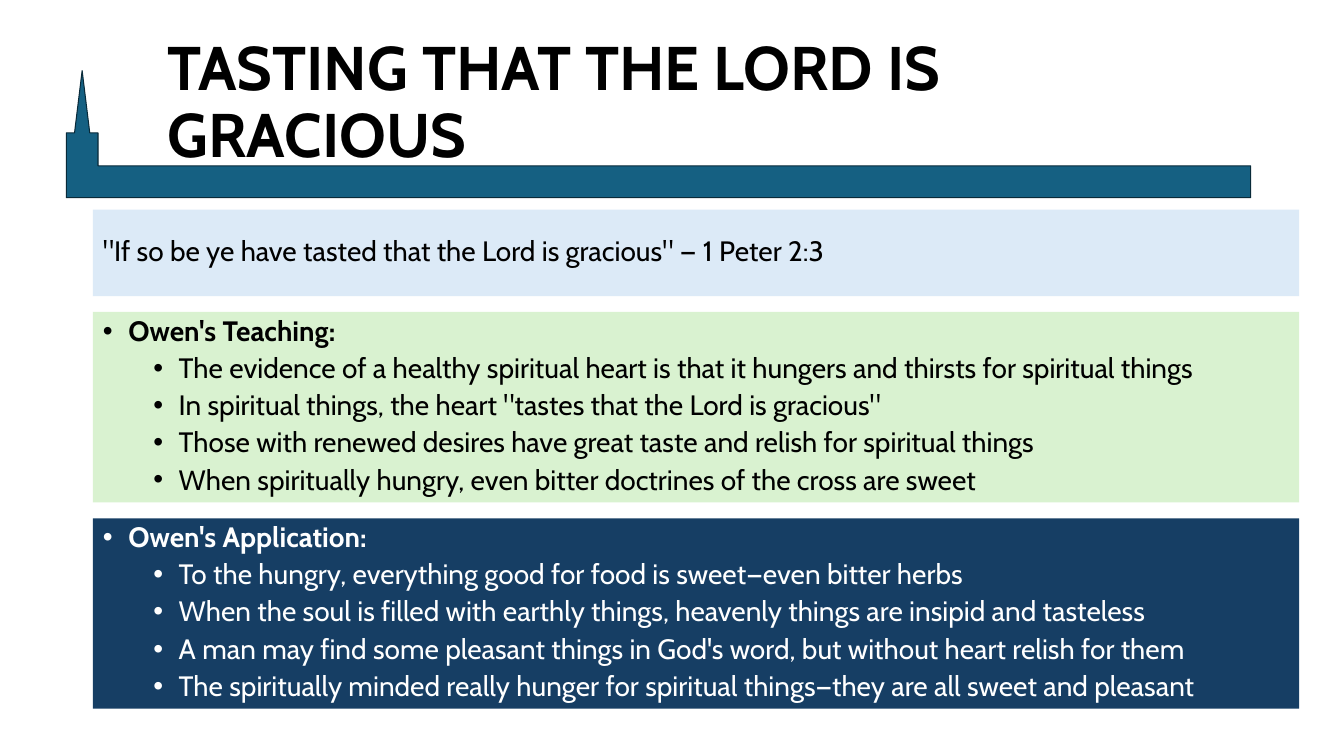
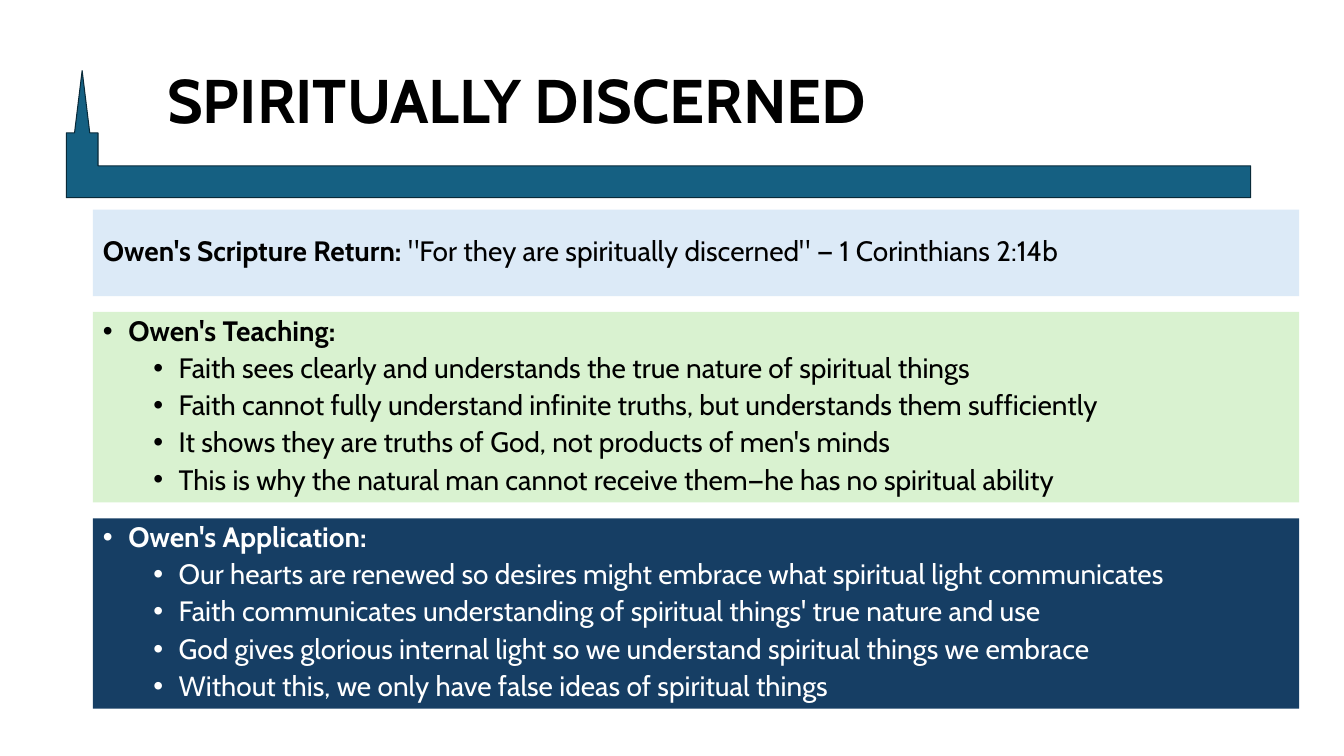
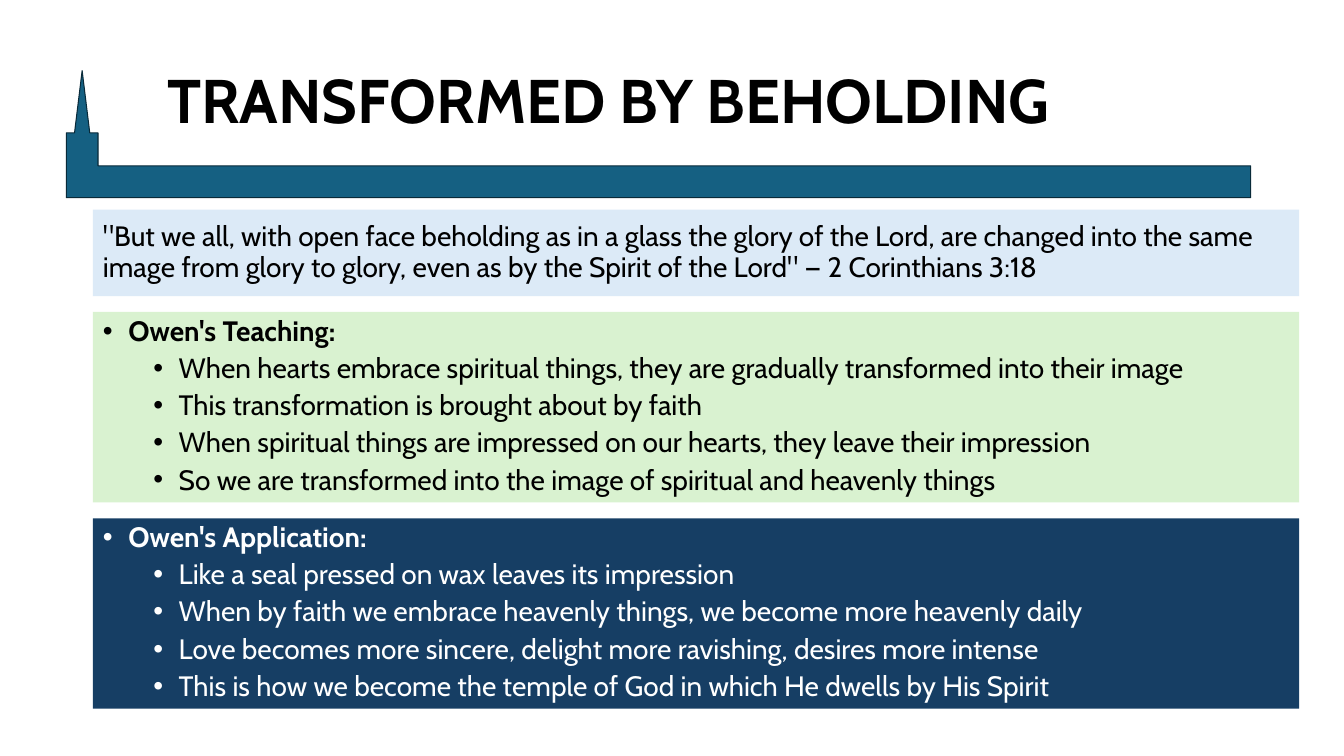
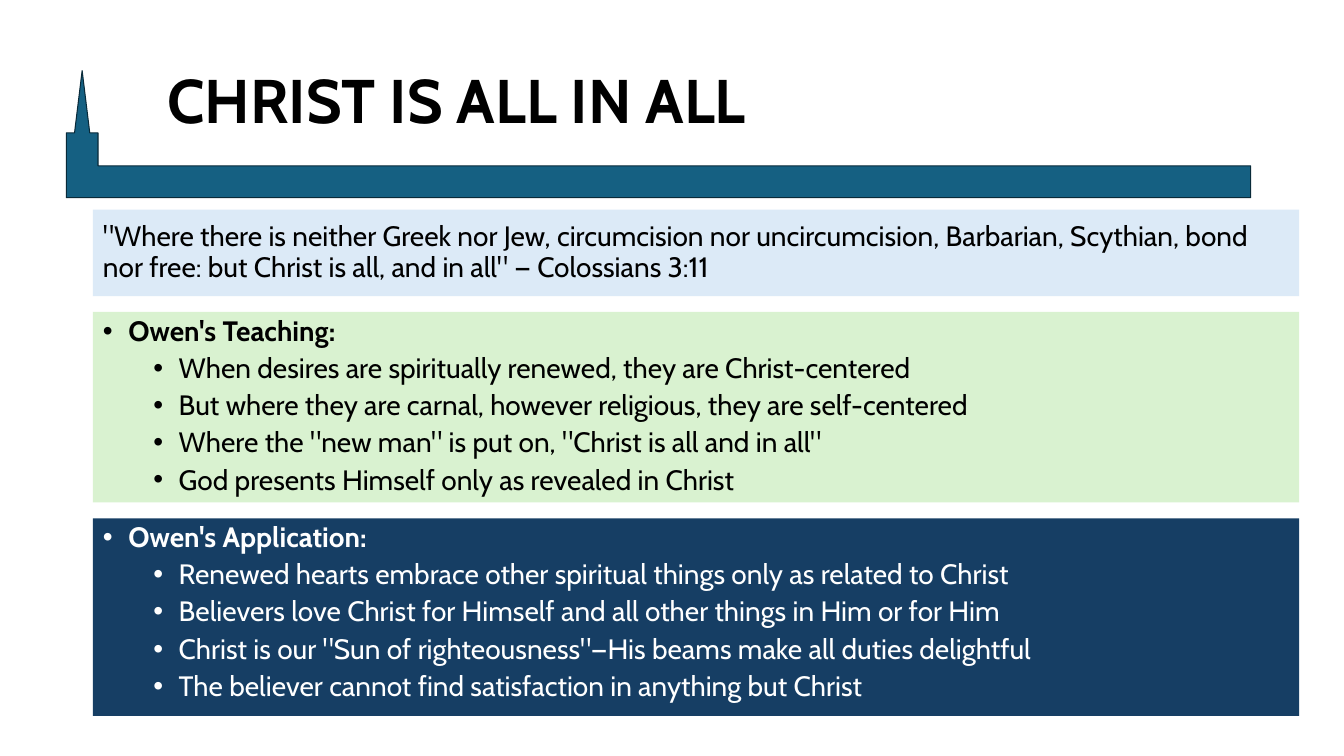
import lxml.etree
import pptx
import pptx.dml.color
import pptx.enum.shapes
import pptx.enum.text
import pptx.oxml.ns
import pptx.util

Cm = pptx.util.Cm
Pt = pptx.util.Pt
ANCHOR = pptx.enum.text.MSO_ANCHOR
qn = pptx.oxml.ns.qn

COLORS = {
    "band": "156082",
    "band_line": "092A39",
    "quote": "DCEAF7",
    "teaching": "D9F2D0",
    "application": "163E64",
    "dark": "000000",
    "light": "FFFFFF",
}

SLIDES = [
    {
        "title": "TASTING THAT THE LORD IS GRACIOUS",
        "quote": '"If so be ye have tasted that the Lord is gracious" — 1 Peter 2:3',
        "teaching": [
            "The evidence of a healthy spiritual heart is that it hungers and thirsts for spiritual things",
            'In spiritual things, the heart "tastes that the Lord is gracious"',
            "Those with renewed desires have great taste and relish for spiritual things",
            "When spiritually hungry, even bitter doctrines of the cross are sweet",
        ],
        "application": [
            "To the hungry, everything good for food is sweet—even bitter herbs",
            "When the soul is filled with earthly things, heavenly things are insipid and tasteless",
            "A man may find some pleasant things in God's word, but without heart relish for them",
            "The spiritually minded really hunger for spiritual things—they are all sweet and pleasant",
        ],
    },
    {
        "title": "SPIRITUALLY DISCERNED",
        "lead": "Owen's Scripture Return:",
        "quote": ' "For they are spiritually discerned" — 1 Corinthians 2:14b',
        "teaching": [
            "Faith sees clearly and understands the true nature of spiritual things",
            "Faith cannot fully understand infinite truths, but understands them sufficiently",
            "It shows they are truths of God, not products of men's minds",
            "This is why the natural man cannot receive them—he has no spiritual ability",
        ],
        "application": [
            "Our hearts are renewed so desires might embrace what spiritual light communicates",
            "Faith communicates understanding of spiritual things' true nature and use",
            "God gives glorious internal light so we understand spiritual things we embrace",
            "Without this, we only have false ideas of spiritual things",
        ],
    },
    {
        "title": "TRANSFORMED BY BEHOLDING",
        "quote": '"But we all, with open face beholding as in a glass the glory of the Lord, are changed '
                 'into the same image from glory to glory, even as by the Spirit of the Lord" — 2 Corinthians 3:18',
        "teaching": [
            "When hearts embrace spiritual things, they are gradually transformed into their image",
            "This transformation is brought about by faith",
            "When spiritual things are impressed on our hearts, they leave their impression",
            "So we are transformed into the image of spiritual and heavenly things",
        ],
        "application": [
            "Like a seal pressed on wax leaves its impression",
            "When by faith we embrace heavenly things, we become more heavenly daily",
            "Love becomes more sincere, delight more ravishing, desires more intense",
            "This is how we become the temple of God in which He dwells by His Spirit",
        ],
    },
    {
        "title": "CHRIST IS ALL IN ALL",
        "quote": '"Where there is neither Greek nor Jew, circumcision nor uncircumcision, Barbarian, Scythian, '
                 'bond nor free: but Christ is all, and in all" — Colossians 3:11',
        "teaching": [
            "When desires are spiritually renewed, they are Christ-centered",
            "But where they are carnal, however religious, they are self-centered",
            'Where the "new man" is put on, "Christ is all and in all"',
            "God presents Himself only as revealed in Christ",
        ],
        "application": [
            "Renewed hearts embrace other spiritual things only as related to Christ",
            "Believers love Christ for Himself and all other things in Him or for Him",
            'Christ is our "Sun of righteousness"—His beams make all duties delightful',
            "The believer cannot find satisfaction in anything but Christ",
        ],
        "application_height": 4.98,
    },
]


def rgb(name):
    return pptx.dml.color.RGBColor.from_string(COLORS[name])


def add_text(p, text, size=20, bold=False, color="dark", font="Cabin"):
    r = p.add_run()
    r.text = text
    r.font.name = font
    r.font.size = Pt(size)
    r.font.bold = bold
    r.font.color.rgb = rgb(color)


class Deck:
    LEFT, TOP, WIDTH, GAP = 2.34, 5.28, 30.4, 0.4
    QUOTE_HEIGHT, LIST_HEIGHT = 2.18, 4.8
    QUOTE, TEACHING, SPARE, APPLICATION = 1, 2, 3, 4

    def __init__(self):
        self.prs = pptx.Presentation()
        self.prs.slide_width = Cm(33.87)
        self.prs.slide_height = Cm(19.05)
        self.layout = self.prs.slide_layouts[4]

    def add_slide(self):
        self.s = self.prs.slides.add_slide(self.layout)
        self.top = self.TOP
        spare = self.s.placeholders[self.SPARE].element
        spare.getparent().remove(spare)

    def add_steeple_band(self):
        sp = self.s.shapes.add_shape(pptx.enum.shapes.MSO_SHAPE.BENT_UP_ARROW,
                                     Cm(1.88), Cm(1.78), Cm(29.64), Cm(3.2))
        for i, value in enumerate((0.25, 0.06, 0.49)):
            sp.adjustments[i] = value
        sp.shadow.inherit = False
        sp.fill.solid()
        sp.fill.fore_color.rgb = rgb("band")
        sp.line.color.rgb = rgb("band_line")
        sp.line.width = Pt(0.75)
        sp.element.spPr.find(qn("a:xfrm")).set("flipH", "1")
        self.layout.shapes.element.insert(2, sp.element)

    def place(self, sp, left, top, width, height, anchor):
        sp.left, sp.top, sp.width, sp.height = Cm(left), Cm(top), Cm(width), Cm(height)
        tf = sp.text_frame
        tf.auto_size = pptx.enum.text.MSO_AUTO_SIZE.NONE
        tf.word_wrap = True
        tf.vertical_anchor = anchor
        return tf

    def format_paragraph(self, p, level=0, bullet=False):
        if bullet:
            pPr = p._p.get_or_add_pPr()
            pPr.set("marL", str(Cm(0.64 + 1.27 * level)))
            pPr.set("indent", str(Cm(-0.64)))
            lxml.etree.SubElement(pPr, qn("a:buFont")).set("typeface", "Arial")
            lxml.etree.SubElement(pPr, qn("a:buChar")).set("char", "•")
        p.level = level
        p.alignment = pptx.enum.text.PP_ALIGN.LEFT
        p.line_spacing = 0.9
        p.space_before = Pt(5 * level)
        return p

    def add_title(self, text):
        tf = self.place(self.s.shapes.title, 3.96, 1.02, 27.58, 3.2, ANCHOR.MIDDLE)
        add_text(self.format_paragraph(tf.paragraphs[0]), text, size=44, bold=True)

    def add_panel(self, idx, fill, height, anchor):
        sp = self.s.placeholders[idx]
        tf = self.place(sp, self.LEFT, self.top, self.WIDTH, height, anchor)
        sp.fill.solid()
        sp.fill.fore_color.rgb = rgb(fill)
        self.top += height + self.GAP
        return tf

    def add_quote(self, text, lead=None):
        tf = self.add_panel(self.QUOTE, "quote", self.QUOTE_HEIGHT, ANCHOR.MIDDLE)
        p = self.format_paragraph(tf.paragraphs[0])
        if lead:
            add_text(p, lead, bold=True)
        add_text(p, text)

    def add_list(self, idx, fill, heading, items, color="dark", height=LIST_HEIGHT):
        tf = self.add_panel(idx, fill, height, ANCHOR.TOP)
        p = self.format_paragraph(tf.paragraphs[0], bullet=True)
        add_text(p, heading, bold=True, color=color)
        for item in items:
            p = self.format_paragraph(tf.add_paragraph(), level=1, bullet=True)
            add_text(p, item, color=color)


def main():
    deck = Deck()
    for i, content in enumerate(SLIDES):
        deck.add_slide()
        if i == 0:
            deck.add_steeple_band()
        deck.add_title(content["title"])
        deck.add_quote(content["quote"], lead=content.get("lead"))
        deck.add_list(deck.TEACHING, "teaching", "Owen's Teaching:", content["teaching"])
        deck.add_list(deck.APPLICATION, "application", "Owen's Application:", content["application"],
                      color="light", height=content.get("application_height", deck.LIST_HEIGHT))
    deck.prs.save("out.pptx")


if __name__ == "__main__":
    main()
